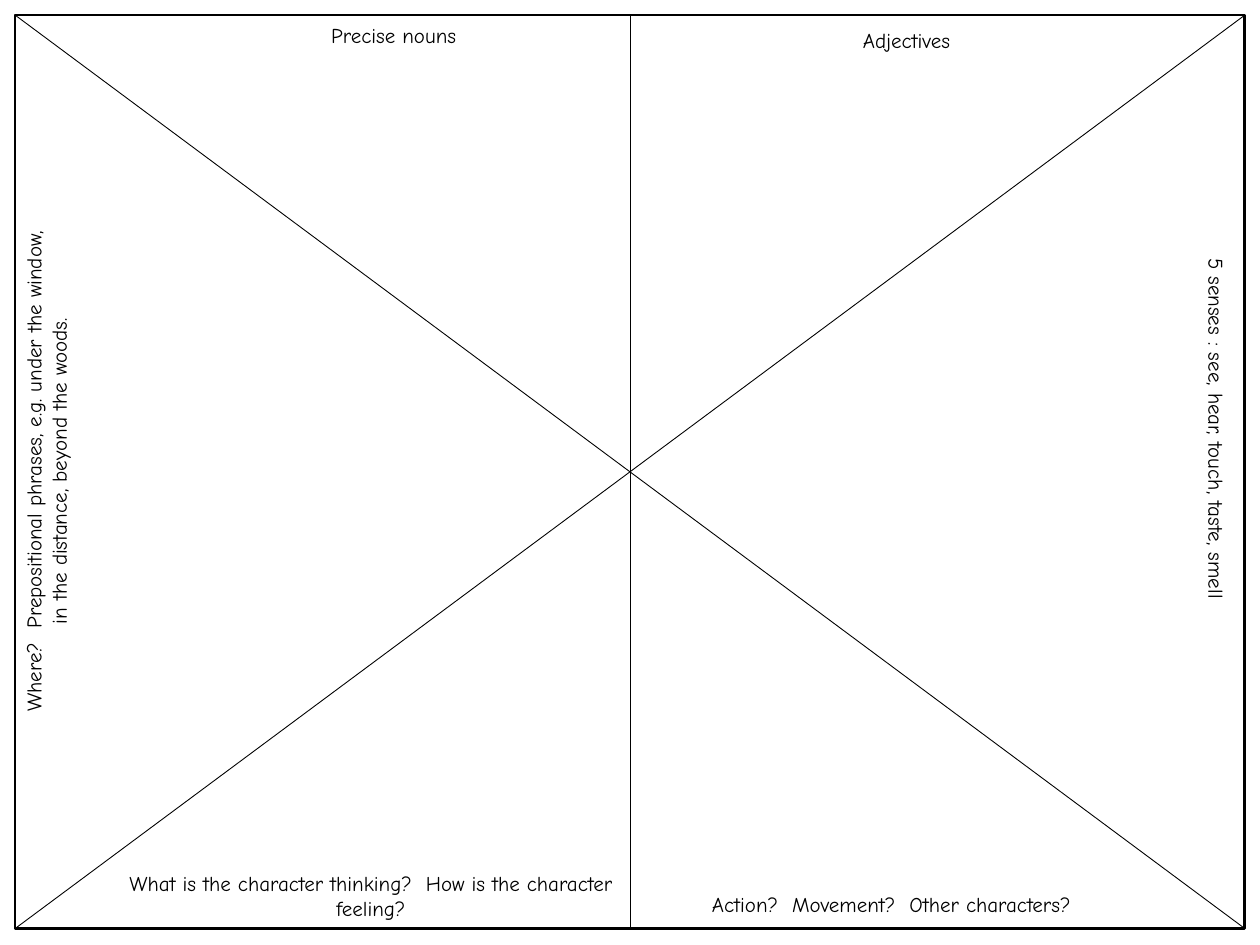
from dataclasses import dataclass

from lxml import etree
from pptx import Presentation
from pptx.dml.color import RGBColor
from pptx.enum.shapes import MSO_CONNECTOR, MSO_SHAPE
from pptx.enum.text import MSO_AUTO_SIZE, PP_ALIGN
from pptx.oxml.ns import qn
from pptx.util import Inches, Pt

RECTANGLE = MSO_SHAPE.RECTANGLE
STRAIGHT = MSO_CONNECTOR.STRAIGHT
CENTER = PP_ALIGN.CENTER
FIT_SHAPE = MSO_AUTO_SIZE.SHAPE_TO_FIT_TEXT
TOP, BOTTOM = 0, 2


@dataclass(frozen=True)
class Theme:
    ink: RGBColor = RGBColor(0, 0, 0)
    font: str = "Comic Neue"
    text_size: float = 12
    frame_width: float = 1.5
    divider_width: float = 0.5


THEME = Theme()

# Frame edges and label sizes, in inches
LEFT, UPPER, WIDTH, HEIGHT = 0.12, 0.12, 9.76, 7.25
RIGHT, LOWER = LEFT + WIDTH, UPPER + HEIGHT
LABEL_WIDTH, ONE_LINE, TWO_LINES = 4.13, 0.3, 0.5

# Text, left, top, height, rotation
LABELS = [
    ("Precise nouns", 1.06, 0.13, ONE_LINE, 0),
    ("Adjectives", 5.13, 0.17, ONE_LINE, 0),
    ("Where?  Prepositional phrases, e.g. under the window, "
     "in the distance, beyond the woods.", -1.7, 3.49, TWO_LINES, 270),
    ("5 senses : see, hear, touch, taste, smell", 7.59, 3.25, ONE_LINE, 90),
    ("What is the character thinking?  How is the character feeling?",
     0.88, 6.86, TWO_LINES, 0),
    ("Action?  Movement?  Other characters?", 5.01, 7.03, ONE_LINE, 0),
]


def set_line(s, width):
    s.line.color.rgb = THEME.ink
    s.line.width = Pt(width)


def add_frame(slide):
    s = slide.shapes.add_shape(RECTANGLE, Inches(LEFT), Inches(UPPER),
                               Inches(WIDTH), Inches(HEIGHT))
    s.shadow.inherit = False
    s.fill.background()
    set_line(s, THEME.frame_width)
    return s


def add_divider(slide, x1, y1, x2, y2):
    s = slide.shapes.add_connector(STRAIGHT, Inches(x1), Inches(y1),
                                   Inches(x2), Inches(y2))
    set_line(s, THEME.divider_width)
    etree.SubElement(s._element.spPr, qn("a:effectLst"))
    return s


def add_text(slide, text, left, top, width, height, *, rotation=0,
             size=THEME.text_size, color=THEME.ink, align=CENTER):
    s = slide.shapes.add_textbox(Inches(left), Inches(top),
                                 Inches(width), Inches(height))
    s.rotation = rotation
    tf = s.text_frame
    tf.word_wrap = True
    tf.auto_size = FIT_SHAPE
    p = tf.paragraphs[0]
    p.alignment = align
    r = p.add_run()
    r.text = text
    r.font.name = THEME.font
    r.font.size = Pt(size)
    r.font.color.rgb = color
    return s


def main():
    prs = Presentation()
    prs.slide_width, prs.slide_height = Inches(10), Inches(7.5)
    slide = prs.slides.add_slide(prs.slide_layouts[6])

    # Frame split into six triangles
    frame = add_frame(slide)
    add_divider(slide, LEFT, UPPER, RIGHT, LOWER)
    add_divider(slide, LEFT, LOWER, RIGHT, UPPER)
    middle = LEFT + WIDTH / 2
    upright = add_divider(slide, middle, UPPER, middle, LOWER)
    upright.begin_connect(frame, TOP)
    upright.end_connect(frame, BOTTOM)

    # One prompt per triangle
    for text, left, top, height, rotation in LABELS:
        add_text(slide, text, left, top, LABEL_WIDTH, height, rotation=rotation)

    prs.save("out.pptx")


if __name__ == "__main__":
    main()
